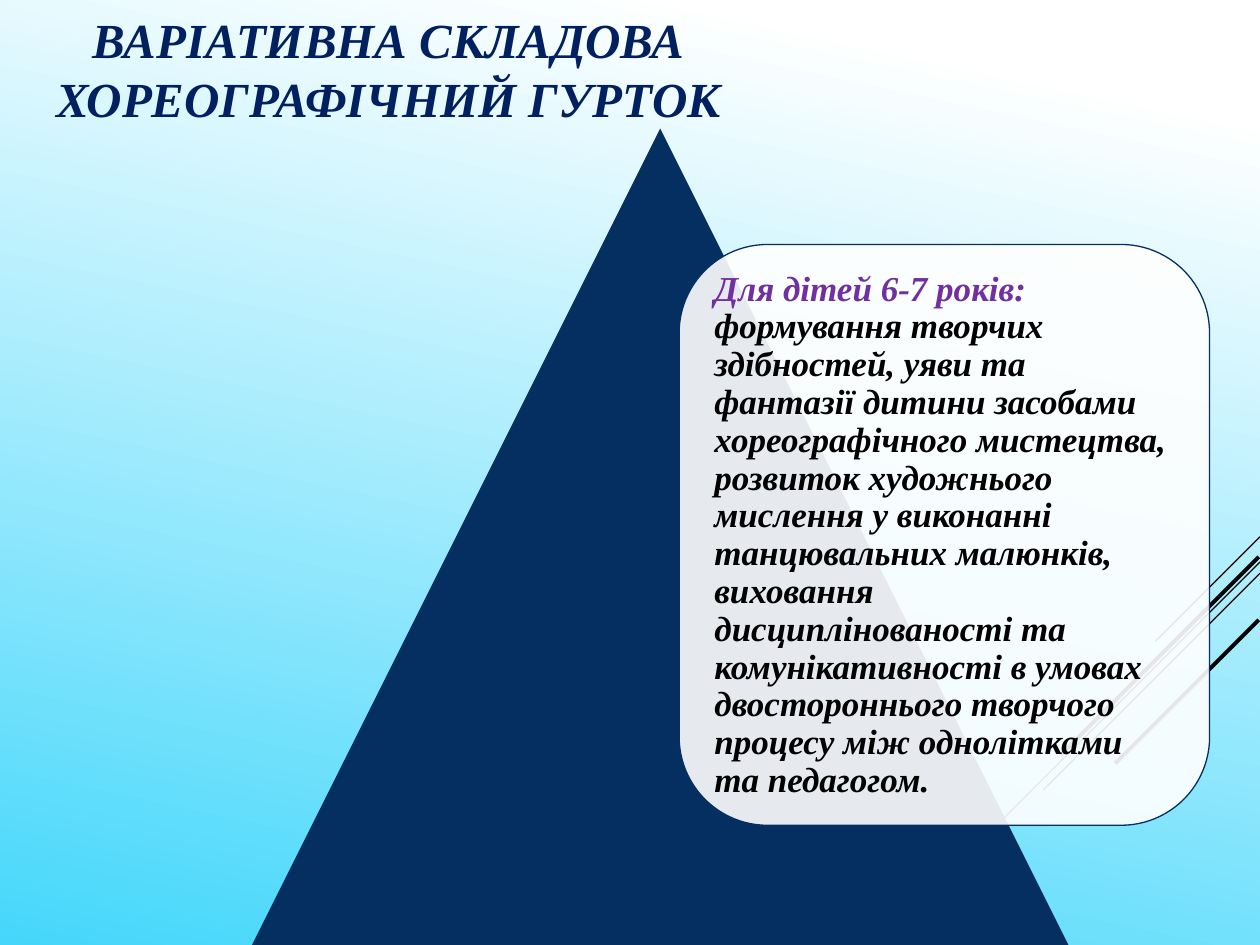
from lxml import etree
from pptx import Presentation
from pptx import util as u
from pptx.dml.color import RGBColor
from pptx.enum import shapes, text
from pptx.oxml.ns import qn

COLORS = {
    "white": "FFFFFF",
    "sky": "45D7FB",
    "navy": "052F61",
    "title": "002060",
    "purple": "7030A0",
    "black": "000000",
}
FONT = {"name": "Times New Roman", "bold": True, "italic": True}

# Start x, start y and length along both axes, width in points
STRIPES = [
    (10, 4.26, 0.83, 0.75),
    (10, 4.46, 2.7, 0.75),
    (10, 4.55, 1.72, 0.75),
    (9.99, 4.42, 1.57, 2.25),
    (9.99, 4.92, 1.14, 2.25),
]


def rgb(color):
    return RGBColor.from_string(COLORS[color])


def apply(target, values):
    for name, value in values.items():
        setattr(target, name, value)


class SlideBuilder:
    def __init__(self, slide):
        self.slide = slide

    def background(self, stops, angle):
        """Angle runs counter-clockwise, as python-pptx counts it."""
        fill = self.slide.background.fill
        fill.gradient()
        fill.gradient_angle = angle
        for stop, (position, color) in zip(fill.gradient_stops, stops):
            stop.position = position
            stop.color.rgb = rgb(color)

    def stripe(self, x, y, length, width):
        """Draw a 45-degree line down and to the left."""
        points = map(u.Inches, (x, y, x - length, y + length))
        line = self.slide.shapes.add_connector(shapes.MSO_CONNECTOR.STRAIGHT, *points)
        line.line.color.rgb = rgb("black")
        line.line.width = u.Pt(width)
        etree.SubElement(line._element.spPr, qn("a:effectLst"))

    def shape(self, kind, box, fill, outline=None, opacity=100):
        shape = self.slide.shapes.add_shape(kind, *map(u.Inches, box))
        shape.shadow.inherit = False
        shape.fill.solid()
        shape.fill.fore_color.rgb = rgb(fill)
        if opacity < 100:
            color = shape.fill._xPr.find(".//" + qn("a:srgbClr"))
            etree.SubElement(color, qn("a:alpha"), val=str(opacity * 1000))
        if outline:
            shape.line.color.rgb = rgb(outline)
            shape.line.width = u.Pt(0.75)
        else:
            shape.line.fill.background()

    def text(self, box, runs, size, inset, anchor, paragraph_format):
        frame = self.slide.shapes.add_textbox(*map(u.Inches, box)).text_frame
        margins = {f"margin_{side}": u.Inches(inset)
                   for side in ("left", "top", "right", "bottom")}
        apply(frame, {"word_wrap": True, "vertical_anchor": anchor, **margins})
        paragraph = frame.paragraphs[0]
        apply(paragraph, paragraph_format)
        for index, (line, color) in enumerate(runs):
            for part_index, part in enumerate(line.split("\n")):
                if part_index:
                    paragraph.add_line_break()
                run = paragraph.add_run()
                run.text = part
                apply(run.font, {**FONT, "size": u.Pt(size)})
                run.font.color.rgb = rgb(color)


def main():
    presentation = Presentation()
    apply(presentation, {"slide_width": u.Inches(10), "slide_height": u.Inches(7.5)})
    builder = SlideBuilder(presentation.slides.add_slide(presentation.slide_layouts[6]))

    builder.background([(0.1, "white"), (1, "sky")], 258)
    for stripe in STRIPES:
        builder.stripe(*stripe)

    builder.text(
        (-0.67, -1.02, 7.51, 2.03),
        [("ВАРІАТИВНА СКЛАДОВА\nХОРЕОГРАФІЧНИЙ ГУРТОК", "title")],
        28, 0, text.MSO_ANCHOR.BOTTOM,
        {"alignment": text.PP_ALIGN.CENTER},
    )

    builder.shape(shapes.MSO_SHAPE.ISOSCELES_TRIANGLE, (2, 1.02, 6.48, 6.48), "navy")
    builder.shape(shapes.MSO_SHAPE.ROUNDED_RECTANGLE, (5.39, 1.94, 4.21, 4.61),
                  "white", outline="navy", opacity=90)
    builder.text(
        (5.59, 2.15, 3.8, 4.2),
        [
            ("Для дітей 6-7 років: ", "purple"),
            ("формування творчих здібностей, уяви та фантазії дитини засобами "
             "хореографічного мистецтва, розвиток художнього мислення у виконанні "
             "танцювальних малюнків, виховання дисциплінованості та "
             "комунікативності в умовах двостороннього творчого процесу між "
             "однолітками та педагогом.", "black"),
        ],
        20, 0.08, text.MSO_ANCHOR.MIDDLE,
        {"alignment": text.PP_ALIGN.LEFT, "line_spacing": 0.9},
    )
    presentation.save("out.pptx")


if __name__ == "__main__":
    main()
